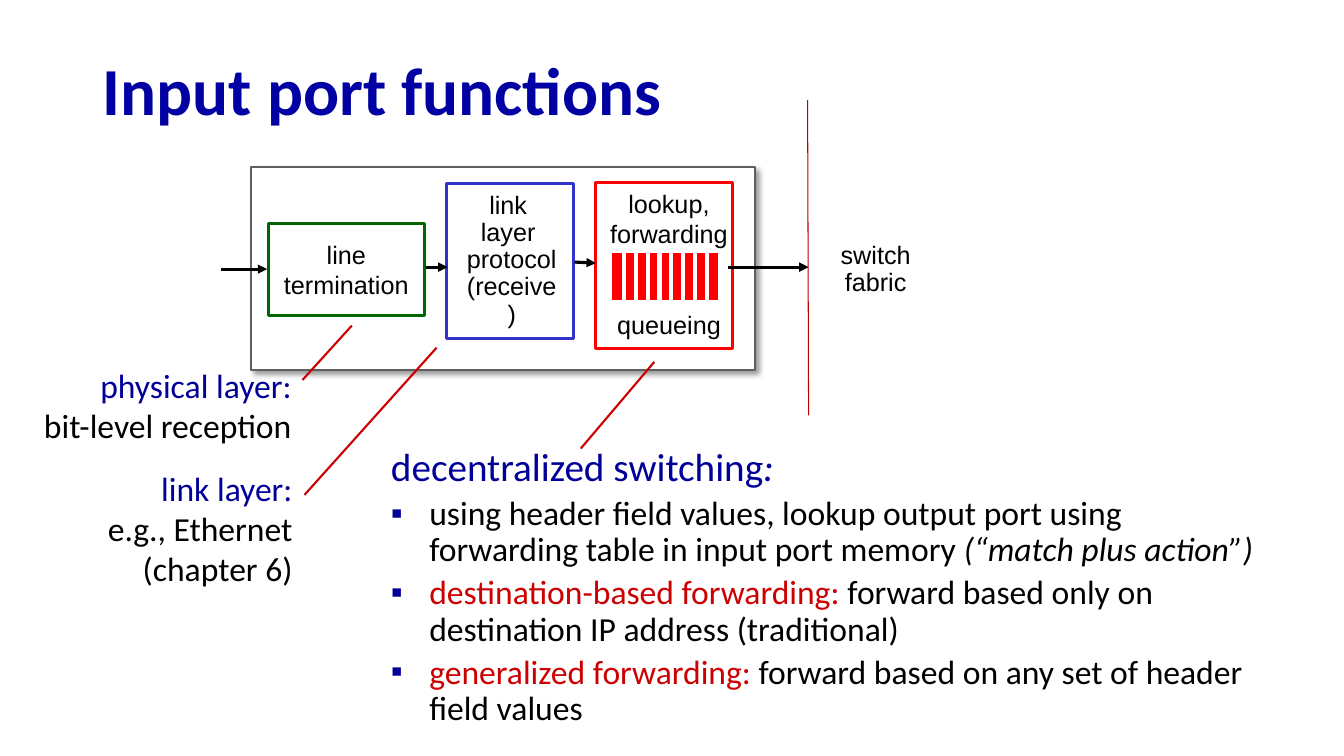
import pptx
import pptx.dml.color
import pptx.enum.shapes
import pptx.enum.text
import pptx.oxml
import pptx.oxml.ns
import pptx.util
from dataclasses import dataclass

Inches = pptx.util.Inches
Pt = pptx.util.Pt
RGB = pptx.dml.color.RGBColor.from_string
ALIGN = pptx.enum.text.PP_ALIGN
ANCHOR = pptx.enum.text.MSO_ANCHOR
RECTANGLE = pptx.enum.shapes.MSO_SHAPE.RECTANGLE
STRAIGHT = pptx.enum.shapes.MSO_CONNECTOR.STRAIGHT
NAMESPACE = pptx.oxml.ns.nsdecls("a")


@dataclass
class Theme:
    title: str = "0000A3"
    heading: str = "000099"
    key: str = "CC0000"
    divider: str = "C00000"
    ink: str = "000000"
    paper: str = "FFFFFF"
    frame: str = "5F5F5F"
    physical: str = "006600"
    link: str = "3333CC"
    queue: str = "FF0000"
    body_font: str = "Calibri"
    diagram_font: str = "Arial"
    title_size: int = 48
    heading_size: int = 28
    body_size: int = 24
    label_size: int = 18


theme = Theme()
deck = pptx.Presentation()
deck.slide_width, deck.slide_height = Inches(13.33), Inches(7.5)
page = deck.slides.add_slide(deck.slide_layouts[6])


def add_text(place, paragraphs, size, font, align=ALIGN.LEFT, anchor=ANCHOR.TOP,
             wrap=False, spacing=1.0, bold=False):
    """Each paragraph is a list of (text, colour, italic) spans."""
    box = page.shapes.add_textbox(*map(Inches, place))
    frame = box.text_frame
    frame.word_wrap, frame.vertical_anchor = wrap, anchor
    for index, spans in enumerate(paragraphs):
        para = frame.paragraphs[0] if index == 0 else frame.add_paragraph()
        para.alignment, para.line_spacing = align, spacing
        for text, colour, italic in spans:
            span = para.add_run()
            span.text = text
            style = {"name": font, "size": Pt(size), "bold": bold, "italic": italic}
            for name, value in style.items():
                setattr(span.font, name, value)
            span.font.color.rgb = RGB(colour)
    return frame


def add_line(start, end, colour, width, arrow=False):
    line = page.shapes.add_connector(STRAIGHT, *map(Inches, start + end))
    line.line.color.rgb = RGB(colour)
    line.line.width = Pt(width)
    if arrow:
        line.line._get_or_add_ln().append(
            pptx.oxml.parse_xml(f'<a:tailEnd {NAMESPACE} type="triangle"/>'))
    line._element.spPr.append(pptx.oxml.parse_xml(f"<a:effectLst {NAMESPACE}/>"))


# Title
add_text((0.92, 0.44, 11.5, 0.98), [[("Input port functions", theme.title, False)]],
         theme.title_size, theme.body_font, anchor=ANCHOR.MIDDLE, wrap=True,
         spacing=0.9, bold=True)

# Port frame, its three stages and the queue block
blocks = {
    "port": ((2.49, 1.66, 5, 2.01), theme.paper, theme.frame, 1.5),
    "physical": ((2.66, 2.22, 1.55, 0.91), theme.paper, theme.physical, 2.25),
    "link": ((4.43, 1.82, 1.26, 1.54), theme.paper, theme.link, 2.25),
    "lookup": ((5.91, 1.81, 1.36, 1.65), theme.paper, theme.queue, 2.25),
    "queue": ((6.05, 2.49, 1.09, 0.51), theme.queue, theme.paper, 3),
}
for name, (place, fill, outline, width) in blocks.items():
    block = page.shapes.add_shape(RECTANGLE, *map(Inches, place))
    block.shadow.inherit = False
    block.fill.solid()
    block.fill.fore_color.rgb = RGB(fill)
    block.line.color.rgb = RGB(outline)
    block.line.width = Pt(width)
    if name == "port":
        block._element.spPr.find(pptx.oxml.ns.qn("a:effectLst")).append(
            pptx.oxml.parse_xml(
                f'<a:outerShdw {NAMESPACE} blurRad="{Pt(4)}" dist="{Pt(3)}" '
                f'dir="2700000" algn="tl" rotWithShape="0"><a:srgbClr val="{theme.ink}">'
                '<a:alpha val="40000"/></a:srgbClr></a:outerShdw>'))

# White gaps that cut the queue into cells
for gap in range(8):
    across = 6.19 + gap * 0.117
    add_line((across, 2.5), (across, 2.99), theme.paper, 3)

# Diagram labels
labels = [
    ((2.66, 2.22, 1.55, 0.91), ["line", "termination"], ANCHOR.MIDDLE, 1.0),
    ((4.5, 2.13, 1.15, 0.91), ["link ", "layer ", "protocol", "(receive)"],
     ANCHOR.MIDDLE, 0.9),
    ((8.11, 2.22, 1.15, 0.91), ["switch", "fabric"], ANCHOR.MIDDLE, 0.9),
    ((5.95, 1.82, 1.37, 1.6), ["lookup,", "forwarding", "queueing"], ANCHOR.TOP, 1.0),
]
for place, words, anchor, spacing in labels:
    label = add_text(place, [[(word, theme.ink, False)] for word in words],
                     theme.label_size, theme.diagram_font, ALIGN.CENTER, anchor,
                     spacing=spacing)
    if "queueing" in words:
        label.paragraphs[-1].space_before = Pt(43)

# Flow arrows
for start, end in [((2.19, 2.67), (2.65, 2.67)), ((4.23, 2.65), (4.44, 2.65)),
                   ((5.7, 2.6), (5.91, 2.61)), ((7.22, 2.65), (8.02, 2.65))]:
    add_line(start, end, theme.ink, 2.25, arrow=True)

# Fabric boundary and callout lines
add_line((8.01, 0.99), (8.02, 4.12), theme.divider, 0.75)
for start, end in [((3, 3.77), (3.49, 3.23)), ((3.02, 4.91), (4.33, 3.45)),
                   ((5.76, 4.45), (6.49, 3.59))]:
    add_line(start, end, theme.key, 1.5)

# Layer notes on the left
for place, heading, details in [
    ((0.28, 3.57, 2.71, 0.91), "physical layer:", ["bit-level reception"]),
    ((0.95, 4.59, 2.05, 1.31), "link layer:", ["e.g., Ethernet", "(chapter 6)"]),
]:
    add_text(place, [[(heading, theme.heading, False)]]
             + [[(detail, theme.ink, False)] for detail in details],
             theme.body_size, theme.body_font, ALIGN.RIGHT)

# Decentralized switching list
switching = add_text((3.78, 4.39, 8.96, 2.92), [
    [("decentralized switching", theme.heading, False), (":", theme.heading, True)],
    [("using header field values, lookup output port using forwarding table in input "
      "port memory ", theme.ink, False), ("(“match plus action”)", theme.ink, True)],
    [("destination-based forwarding: ", theme.key, False),
     ("forward based only on destination IP address (traditional)", theme.ink, False)],
    [("generalized forwarding: ", theme.key, False),
     ("forward based on any set of header field values", theme.ink, False)],
], theme.body_size, theme.body_font, wrap=True, spacing=0.9)
for span in switching.paragraphs[0].runs:
    span.font.size = Pt(theme.heading_size)
for para in switching.paragraphs[1:]:
    para.space_before = Pt(4.8)
    properties = para._p.get_or_add_pPr()
    properties.set("marL", str(Inches(0.38)))
    properties.set("indent", str(Inches(-0.38)))
    for bullet in (f'<a:buClr {NAMESPACE}><a:srgbClr val="{theme.heading}"/></a:buClr>',
                   f'<a:buFont {NAMESPACE} typeface="{theme.diagram_font}"/>',
                   f'<a:buChar {NAMESPACE} char="▪"/>'):
        properties.append(pptx.oxml.parse_xml(bullet))

deck.save("out.pptx")
